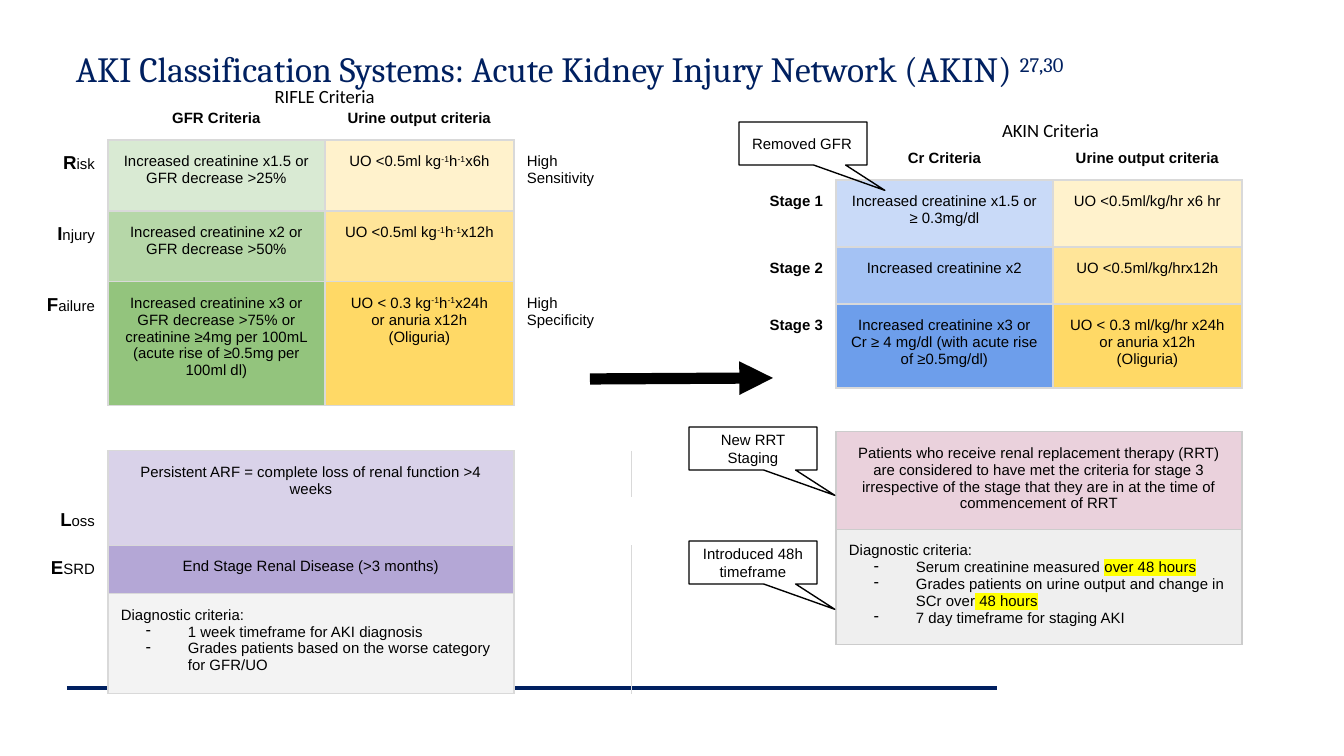
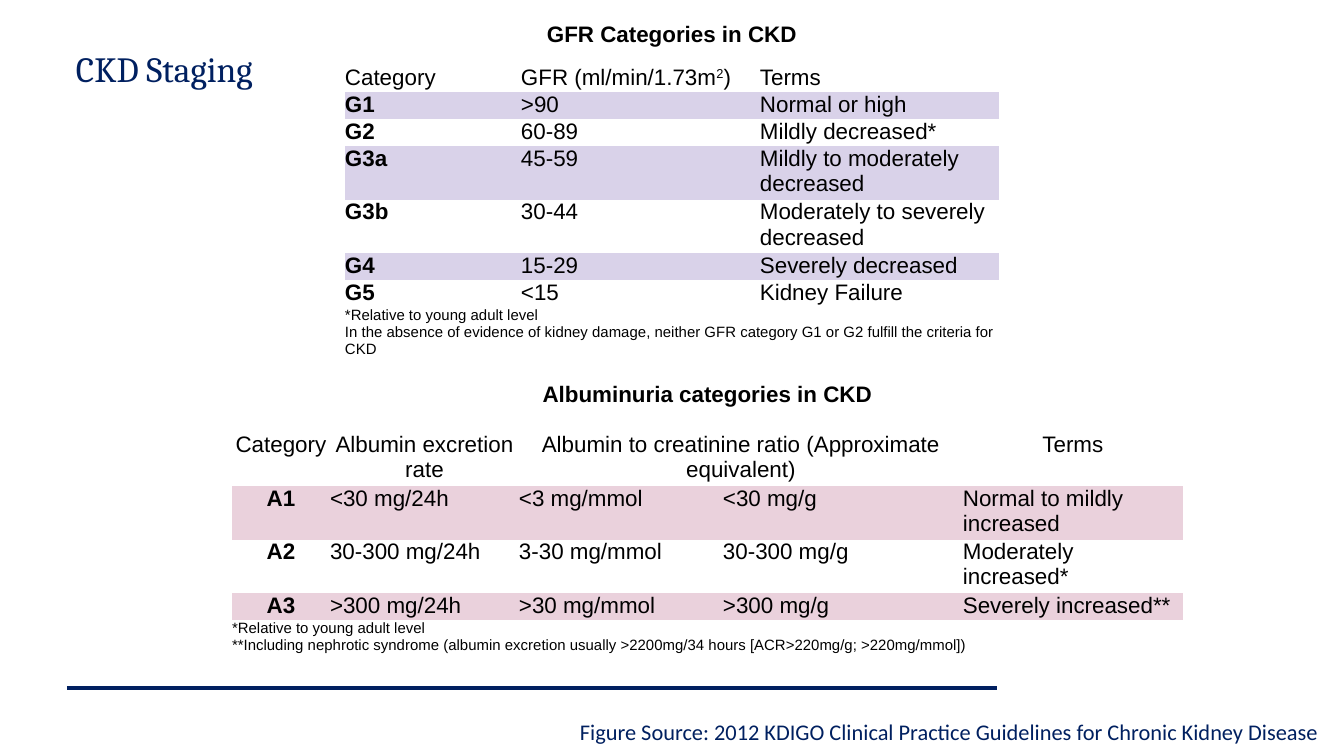
import dataclasses

import lxml.etree
import pptx
import pptx.dml.color
import pptx.enum.shapes
import pptx.enum.text
import pptx.oxml.ns
import pptx.util

PX = 914400 / 134.4  # EMU in one px
ALIGN = pptx.enum.text.PP_ALIGN
ANCHOR = pptx.enum.text.MSO_ANCHOR
SHAPE = pptx.enum.shapes.MSO_SHAPE
qn = pptx.oxml.ns.qn


@dataclasses.dataclass(frozen=True)
class Theme:
    navy: str = "002060"
    black: str = "000000"
    edge: str = "D9D9D9"
    dark_edge: str = "CCCCCC"
    greens: tuple = ("D9EAD3", "B6D7A8", "93C47D")
    blues: tuple = ("C9DAF8", "A4C2F4", "6D9EEB")
    yellows: tuple = ("FFF2CC", "FFE599", "FFD966")
    lilac: str = "D9D2E9"
    purple: str = "B4A7D6"
    pink: str = "EAD1DC"
    pale_gray: str = "F3F3F3"
    gray: str = "EFEFEF"
    marker: str = "FFFF00"
    title_font: str = "Cambria"
    label_font: str = "Calibri"
    table_font: str = "Arial"
    title_size: int = 19
    table_size: int = 12
    label_size: int = 10
    small_size: int = 8


THEME = Theme()
SUP = {"sup": True}
INITIAL = {"bold": True, "size": THEME.label_size}
MARKED = {"highlight": THEME.marker}
PER_KG_HOUR = [("-1", SUP), "h", ("-1", SUP)]

# ---- Content: a paragraph is a string or a list of runs ----
AKIN_TITLE = ["AKI Classification Systems: Acute Kidney Injury Network (AKIN) ", ("27,30", SUP)]
RIFLE_HEADS = ["GFR Criteria", "Urine output criteria"]
RIFLE_STAGES = [
    ("R", "isk", "Increased creatinine x1.5 or GFR decrease >25%",
     [["UO <0.5ml kg", *PER_KG_HOUR, "x6h"]], "High Sensitivity"),
    ("I", "njury", "Increased creatinine x2 or GFR decrease >50%",
     [["UO <0.5ml kg", *PER_KG_HOUR, "x12h"]], None),
    ("F", "ailure",
     "Increased creatinine x3 or GFR decrease >75% or creatinine ≥4mg per 100mL "
     "(acute rise of ≥0.5mg per 100ml dl)",
     [["UO < 0.3 kg", *PER_KG_HOUR, "x24h"], "or anuria x12h", "(Oliguria)"], "High Specificity"),
]
RIFLE_OUTCOMES = {6: ("L", "oss"), 7: ("E", "SRD")}
PERSISTENT_ARF = "Persistent ARF = complete loss of renal function >4 weeks"
END_STAGE = "End Stage Renal Disease (>3 months)"
RIFLE_DIAGNOSTIC = ["Diagnostic criteria:", "1 week timeframe for AKI diagnosis",
                    "Grades patients based on the worse category for GFR/UO"]

AKIN_HEADS = ["Cr Criteria", "Urine output criteria"]
AKIN_STAGES = [
    ("Stage 1", "Increased creatinine x1.5 or ≥ 0.3mg/dl", ["UO <0.5ml/kg/hr x6 hr"]),
    ("Stage 2", "Increased creatinine x2", ["UO <0.5ml/kg/hrx12h"]),
    ("Stage 3", "Increased creatinine x3 or Cr ≥ 4 mg/dl (with acute rise of ≥0.5mg/dl)",
     ["UO < 0.3 ml/kg/hr x24h", "or anuria x12h", "(Oliguria)"]),
]
RRT_RULE = ("Patients who receive renal replacement therapy (RRT) are considered to have met the "
            "criteria for stage 3 irrespective of the stage that they are in at the time of "
            "commencement of RRT")
AKIN_DIAGNOSTIC = [
    "Diagnostic criteria:",
    ["Serum creatinine measured ", ("over 48 hours", MARKED)],
    ["Grades patients on urine output and change in SCr over", (" 48 hours", MARKED)],
    "7 day timeframe for staging AKI",
]
SYSTEM_NAMES = [("RIFLE Criteria", 234, 74), ("AKIN Criteria", 960, 108)]
CHANGES = [("Removed GFR", 739, 122, ALIGN.LEFT),
           ("Introduced 48h timeframe", 689, 541, ALIGN.CENTER),
           ("New RRT Staging", 689, 427, ALIGN.CENTER)]

CKD_TITLE = "CKD Staging"
CKD_SOURCE = "Figure Source: 2012 KDIGO Clinical Practice Guidelines for Chronic Kidney Disease"
GFR_NAME = "GFR Categories in CKD"
GFR_HEADS = ["Category", ["GFR (ml/min/1.73m", ("2", SUP), ")"], "Terms"]
GFR_ROWS = [
    ("G1", ">90", "Normal or high"),
    ("G2", "60-89", "Mildly decreased*"),
    ("G3a", "45-59", "Mildly to moderately decreased"),
    ("G3b", "30-44", "Moderately to severely decreased"),
    ("G4", "15-29", "Severely decreased"),
    ("G5", "<15", "Kidney Failure"),
]
GFR_NOTES = ["*Relative to young adult level",
             "In the absence of evidence of kidney damage, neither GFR category G1 or G2 "
             "fulfill the criteria for CKD"]
ALBUMIN_NAME = "Albuminuria categories in CKD"
ALBUMIN_HEADS = ["Category", "Albumin excretion rate",
                 "Albumin to creatinine ratio (Approximate equivalent)", None, "Terms"]
ALBUMIN_ROWS = [
    ("A1", "<30 mg/24h", "<3 mg/mmol", "<30 mg/g", "Normal to mildly increased"),
    ("A2", "30-300 mg/24h", "3-30 mg/mmol", "30-300 mg/g", "Moderately increased*"),
    ("A3", ">300 mg/24h", ">30 mg/mmol", ">300 mg/g", "Severely increased**"),
]
ALBUMIN_NOTES = ["*Relative to young adult level",
                 "**Including nephrotic syndrome (albumin excretion usually >2200mg/34 hours "
                 "[ACR>220mg/g; >220mg/mmol])"]


# ---- Helpers ----
def px(length):
    return pptx.util.Emu(round(length * PX))


def rgb(value):
    return pptx.dml.color.RGBColor.from_string(value)


def add_xml(parent, tag, **attributes):
    return lxml.etree.SubElement(parent, qn(tag), attributes)


def add_color(parent, tag, value):
    add_xml(add_xml(parent, tag), "a:srgbClr", val=value)


def write(frame, text, size=THEME.small_size, font=THEME.table_font, color=THEME.black,
          bold=False, align=ALIGN.LEFT, bullets=False):
    """Fill a text frame; with bullets, every paragraph after the first is a dash item."""
    for i, content in enumerate([text] if isinstance(text, str) else text):
        paragraph = frame.paragraphs[0] if i == 0 else frame.add_paragraph()
        paragraph.alignment = align
        if bullets and i:
            props = paragraph._p.get_or_add_pPr()
            props.set("marL", str(px(67)))
            props.set("indent", str(px(-42)))
            add_color(props, "a:buClr", THEME.black)
            add_xml(props, "a:buChar", char="-")
        for piece in [content] if isinstance(content, str) else content:
            words, style = (piece, {}) if isinstance(piece, str) else piece
            run = paragraph.add_run()
            run.text = words
            run.font.size = pptx.util.Pt(style.get("size", size))
            run.font.bold = style.get("bold", bold)
            run.font.color.rgb = rgb(color)
            props = run._r.get_or_add_rPr()
            if "highlight" in style:
                add_color(props, "a:highlight", style["highlight"])
            if "sup" in style:
                props.set("baseline", "30000")
            run.font.name = font


def set_insets(holder, across, down):
    holder.margin_left = holder.margin_right = px(across)
    holder.margin_top = holder.margin_bottom = px(down)


def add_label(slide, text, left, top, width, height, insets=(13, 13), anchor=ANCHOR.TOP, **fmt):
    frame = slide.shapes.add_textbox(px(left), px(top), px(width), px(height)).text_frame
    frame.word_wrap = True
    frame.vertical_anchor = anchor
    set_insets(frame, *insets)
    write(frame, text, **fmt)


def add_line(slide, x1, y1, x2, y2, color, points, arrow=False):
    line = slide.shapes.add_connector(pptx.enum.shapes.MSO_CONNECTOR.STRAIGHT,
                                      px(x1), px(y1), px(x2), px(y2))
    line.line.width = pptx.util.Pt(points)
    line.line.color.rgb = rgb(color)
    if arrow:
        add_xml(line.line._get_or_add_ln(), "a:tailEnd", type="triangle")
    add_xml(line._element.spPr, "a:effectLst")


def entry(text, fill=None, span=(1, 1), edge=None, anchor=ANCHOR.TOP, **fmt):
    return {"text": text, "fill": fill, "span": span, "edge": edge, "anchor": anchor, "fmt": fmt}


def draw_edges(cell, row, col, edges):
    """Draw each side that this cell or its neighbour asks for."""
    props = cell._tc.get_or_add_tcPr()
    sides = [("a:lnL", 0, -1), ("a:lnR", 0, 1), ("a:lnT", -1, 0), ("a:lnB", 1, 0)]
    drawn = []
    for tag, down, across in sides:
        color = edges.get((row, col)) or edges.get((row + down, col + across))
        if color:
            side = lxml.etree.Element(qn(tag), w=str(pptx.util.Pt(0.75)))
            add_color(side, "a:solidFill", color)
            drawn.append(side)
    for i, side in enumerate(drawn):
        props.insert(i, side)


def add_grid(slide, left, top, widths, heights, entries, inset=0):
    table = slide.shapes.add_table(len(heights), len(widths), px(left), px(top),
                                   px(sum(widths)), px(sum(heights))).table
    table.first_row = table.horz_banding = False
    no_style = "{2D5ABB26-0587-4C30-8999-92F81FD0307C}"
    table._tbl.tblPr.find(qn("a:tableStyleId")).text = no_style
    for column, width in zip(table.columns, widths):
        column.width = px(width)
    for row, height in zip(table.rows, heights):
        row.height = px(height)

    edges = {(row + i, col + j): item["edge"] for (row, col), item in entries.items()
             for i in range(item["span"][0]) for j in range(item["span"][1])}
    for row in range(len(heights)):
        for col in range(len(widths)):
            cell = table.cell(row, col)
            item = entries.get((row, col))
            set_insets(cell, *(2 * [inset if item else 0]))
            if item and item["fill"]:
                cell.fill.solid()
                cell.fill.fore_color.rgb = rgb(item["fill"])
            else:
                cell.fill.background()
            draw_edges(cell, row, col, edges)
            if item:
                cell.vertical_anchor = item["anchor"]
                write(cell.text_frame, item["text"], **item["fmt"])
    for (row, col), item in entries.items():
        down, across = item["span"]
        if (down, across) != (1, 1):
            table.cell(row, col).merge(table.cell(row + down - 1, col + across - 1))


def new_slide(deck, title):
    slide = deck.slides.add_slide(deck.slide_layouts[6])
    add_line(slide, 67, 688, 997, 688, THEME.navy, 2)
    add_label(slide, [title], 67, 43, 1210, 52, insets=(9, 5), anchor=ANCHOR.BOTTOM,
              size=THEME.title_size, font=THEME.title_font, color=THEME.navy)
    return slide


# ---- Tables ----
def criteria_heads(heads):
    return {(0, col): entry(head, bold=True, align=ALIGN.CENTER, anchor=ANCHOR.BOTTOM)
            for col, head in enumerate(heads, 1)}


def box(text, fill, span=(1, 1), edge=THEME.edge, align=ALIGN.CENTER, **fmt):
    return entry(text, fill, span, edge, align=align, **fmt)


def initial_label(initial, rest):
    return entry([[(initial, INITIAL), rest]], align=ALIGN.RIGHT)


def rifle_entries():
    entries = criteria_heads(RIFLE_HEADS)
    for i, (initial, rest, gfr, urine, power) in enumerate(RIFLE_STAGES):
        entries[i + 1, 0] = initial_label(initial, rest)
        entries[i + 1, 1] = box(gfr, THEME.greens[i])
        entries[i + 1, 2] = box(urine, THEME.yellows[i])
        if power:
            entries[i + 1, 3] = entry(power)
    for row, letters in RIFLE_OUTCOMES.items():
        entries[row, 0] = initial_label(*letters)
    entries[5, 1] = box(PERSISTENT_ARF, THEME.lilac, (2, 2))
    entries[7, 1] = box(END_STAGE, THEME.purple, (1, 2))
    entries[8, 1] = box(RIFLE_DIAGNOSTIC, THEME.pale_gray, (1, 2), align=ALIGN.LEFT, bullets=True)
    return entries


def akin_entries():
    entries = criteria_heads(AKIN_HEADS)
    for i, (stage, creatinine, urine) in enumerate(AKIN_STAGES):
        entries[i + 1, 0] = entry(stage, bold=True, align=ALIGN.RIGHT)
        entries[i + 1, 1] = box(creatinine, THEME.blues[i])
        entries[i + 1, 2] = box(urine, THEME.yellows[i])
    entries[5, 1] = box(RRT_RULE, THEME.pink, (2, 2), THEME.dark_edge)
    entries[7, 1] = box(AKIN_DIAGNOSTIC, THEME.gray, (1, 2), THEME.dark_edge,
                        align=ALIGN.LEFT, bullets=True)
    return entries


def staging_entries(name, heads, rows, notes, band, head_align, first_align, spans):
    size, width = THEME.table_size, len(heads)
    entries = {(0, 0): entry(name, span=(1, width), size=size, bold=True, align=ALIGN.CENTER)}
    for col, head in enumerate(heads):
        if head:
            entries[1, col] = entry([head], span=(1, spans.get(col, 1)), size=size,
                                    align=head_align)
    for i, values in enumerate(rows):
        for col, value in enumerate(values):
            entries[i + 2, col] = entry(value, None if i % 2 else band, size=size, bold=col == 0,
                                        align=ALIGN.LEFT if col else first_align)
    entries[len(rows) + 2, 0] = entry(notes, span=(1, width))
    return entries


# ---- Slides ----
def build_akin(deck):
    slide = new_slide(deck, AKIN_TITLE)
    add_line(slide, 590, 379, 773, 378, THEME.black, 6, arrow=True)
    add_grid(slide, 746, 129, [90, 217, 189], [51, 67, 57, 84, 44, 47, 47, 111],
             akin_entries(), inset=13)
    add_grid(slide, 18, 94, [90, 217, 189, 118], [46, 71, 71, 124, 45, 46, 47, 47, 100],
             rifle_entries(), inset=13)
    for name, left, top in SYSTEM_NAMES:
        add_label(slide, name, left, top, 181, 43, size=THEME.label_size,
                  font=THEME.label_font, align=ALIGN.CENTER)
    for change, left, top, align in CHANGES:
        callout = slide.shapes.add_shape(SHAPE.RECTANGULAR_CALLOUT, px(left), px(top),
                                         px(128), px(43))
        callout.adjustments[0], callout.adjustments[1] = 0.64, 1.09
        callout.shadow.inherit = False
        callout.fill.background()
        callout.line.color.rgb = rgb(THEME.black)
        callout.line.width = pptx.util.Pt(0.75)
        callout.text_frame.word_wrap = True
        callout.text_frame.vertical_anchor = ANCHOR.MIDDLE
        set_insets(callout.text_frame, 13, 13)
        write(callout.text_frame, change, align=align)


def build_ckd(deck):
    slide = new_slide(deck, CKD_TITLE)
    add_label(slide, CKD_SOURCE, 280, 714, 1048, 35, insets=(9, 5), anchor=ANCHOR.MIDDLE,
              size=THEME.table_size, font=THEME.label_font, color=THEME.navy, align=ALIGN.RIGHT)
    add_grid(slide, 345, 22, [176, 239, 239], [43, 25, 25, 25, 50, 50, 25, 25, 59],
             staging_entries(GFR_NAME, GFR_HEADS, GFR_ROWS, GFR_NOTES, THEME.lilac,
                             ALIGN.LEFT, ALIGN.LEFT, {}))
    add_grid(slide, 232, 382, [98, 189, 204, 240, 220], [50, 50, 50, 50, 25, 51],
             staging_entries(ALBUMIN_NAME, ALBUMIN_HEADS, ALBUMIN_ROWS, ALBUMIN_NOTES, THEME.pink,
                             ALIGN.CENTER, ALIGN.CENTER, {2: 2}))


def main():
    deck = pptx.Presentation()
    deck.slide_width, deck.slide_height = px(1344), px(756)
    build_akin(deck)
    build_ckd(deck)
    deck.save("out.pptx")


if __name__ == "__main__":
    main()
